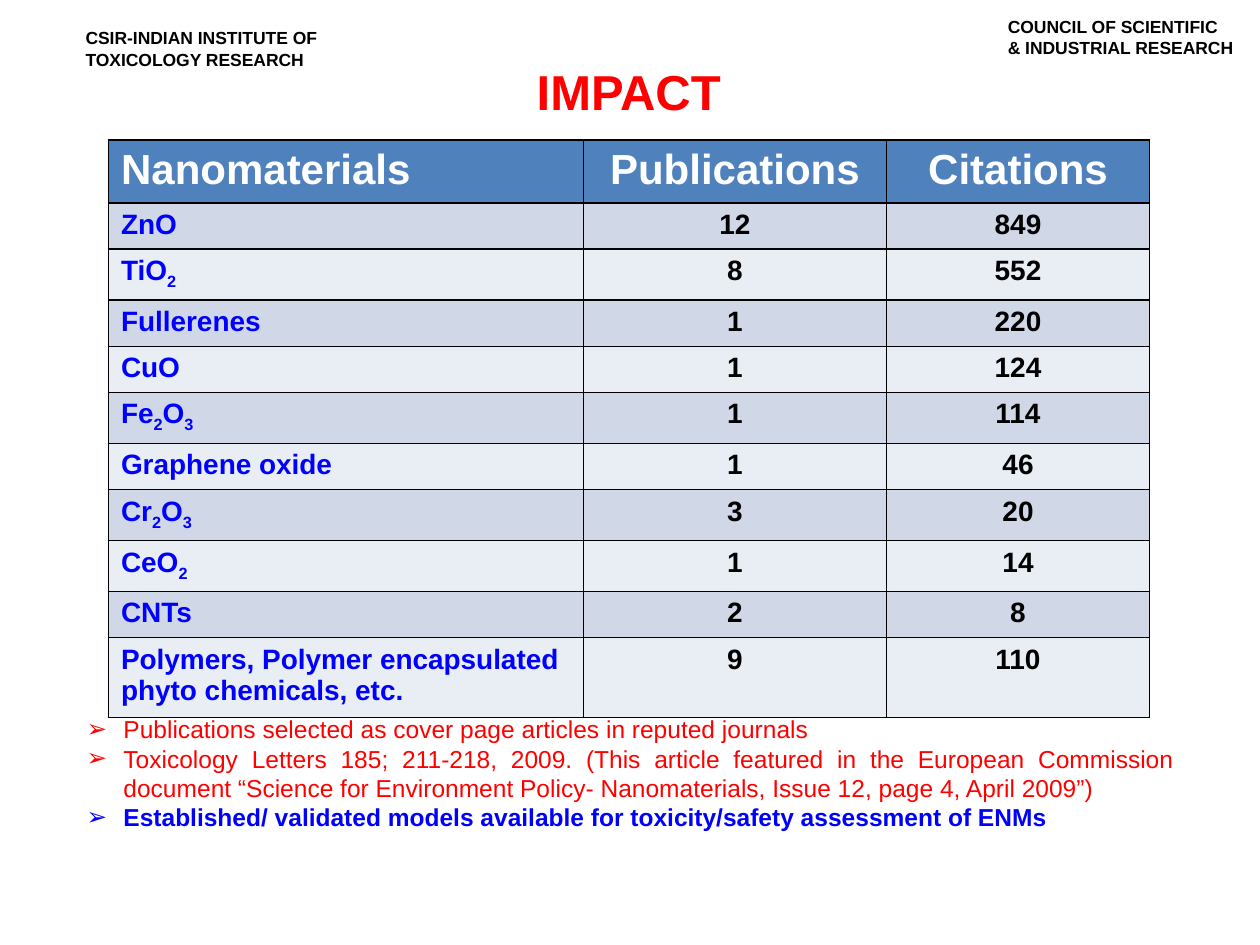
from dataclasses import dataclass
from itertools import groupby

from lxml.etree import SubElement
from pptx import Presentation
from pptx.dml.color import RGBColor
from pptx.enum.text import PP_ALIGN
from pptx.oxml.ns import qn
from pptx.util import Pt


@dataclass(frozen=True)
class Theme:
    font: str = "Arial"
    black: str = "000000"
    white: str = "FFFFFF"
    red: str = "FF0000"
    blue: str = "0000FF"
    header_fill: str = "4F81BD"
    band_fills: tuple = ("D0D8E8", "E9EDF4")
    letterhead_size: int = 10
    title_size: int = 28
    table_header_size: int = 24
    table_body_size: int = 16
    bullet_size: int = 14


THEME = Theme()

COLUMN_WIDTHS = (271.5, 173, 150.5)
HEADINGS = ("Nanomaterials", "Publications", "Citations")
MATERIALS = (
    ("ZnO", 12, 849),
    ("TiO2", 8, 552),
    ("Fullerenes", 1, 220),
    ("CuO", 1, 124),
    ("Fe2O3", 1, 114),
    ("Graphene oxide", 1, 46),
    ("Cr2O3", 3, 20),
    ("CeO2", 1, 14),
    ("CNTs", 2, 8),
    ("Polymers, Polymer encapsulated phyto chemicals, etc.", 9, 110),
)
HEADER_HEIGHT, PLAIN_HEIGHT, FORMULA_HEIGHT, TWO_LINE_HEIGHT = 36, 26.3, 29.1, 45.7

HIGHLIGHTS = (
    ("Publications selected as cover page articles in reputed journals", THEME.red, False),
    ("Toxicology Letters 185; 211-218, 2009. (This article featured in the European "
     "Commission document “Science for Environment Policy- Nanomaterials, Issue 12, "
     "page 4, April 2009”)", THEME.red, False),
    ("Established/ validated models available for toxicity/safety assessment of ENMs",
     THEME.blue, True),
)


def style_paragraph(paragraph, size, color, bold=True, align=PP_ALIGN.LEFT):
    paragraph.alignment = align
    paragraph.font.name = THEME.font
    paragraph.font.size = Pt(size)
    paragraph.font.bold = bold
    paragraph.font.color.rgb = RGBColor.from_string(color)


def add_text_frame(slide, box, wrap=True):
    text_frame = slide.shapes.add_textbox(*map(Pt, box)).text_frame
    text_frame.word_wrap = wrap
    return text_frame


def add_letterhead(slide, box, lines):
    text_frame = add_text_frame(slide, box, wrap=False)
    text_frame.text = "\n".join(lines)
    for paragraph in text_frame.paragraphs:
        style_paragraph(paragraph, THEME.letterhead_size, THEME.black)


def add_title(slide, box, title):
    paragraph = add_text_frame(slide, box).paragraphs[0]
    paragraph.text = title
    style_paragraph(paragraph, THEME.title_size, THEME.red, align=PP_ALIGN.CENTER)


def add_formula(paragraph, formula):
    """Write a material name with its digits as subscripts."""
    for is_digit, letters in groupby(formula, str.isdigit):
        run = paragraph.add_run()
        run.text = "".join(letters)
        if is_digit:
            run._r.get_or_add_rPr().set("baseline", "-25000")


def format_cell(cell, fill):
    properties = cell._tc.get_or_add_tcPr()
    for side in ("lnL", "lnR", "lnT", "lnB"):
        line = SubElement(properties, qn(f"a:{side}"), w=str(Pt(1)))
        solid_fill = SubElement(line, qn("a:solidFill"))
        SubElement(solid_fill, qn("a:srgbClr"), val=THEME.black)
    cell.fill.solid()
    cell.fill.fore_color.rgb = RGBColor.from_string(fill)


def row_height(name):
    if any(map(str.isdigit, name)):
        return FORMULA_HEIGHT
    return TWO_LINE_HEIGHT if len(name) > 30 else PLAIN_HEIGHT


def add_impact_table(slide, left, top):
    heights = [HEADER_HEIGHT] + [row_height(name) for name, *_ in MATERIALS]
    table = slide.shapes.add_table(
        len(heights), len(COLUMN_WIDTHS), Pt(left), Pt(top),
        Pt(sum(COLUMN_WIDTHS)), Pt(sum(heights))).table
    for column, width in zip(table.columns, COLUMN_WIDTHS):
        column.width = Pt(width)
    for row, height in zip(table.rows, heights):
        row.height = Pt(height)

    # Heading row, then alternating bands
    for row_index, values in enumerate((HEADINGS,) + MATERIALS):
        is_header = row_index == 0
        fill = THEME.header_fill if is_header else THEME.band_fills[(row_index - 1) % 2]
        size = THEME.table_header_size if is_header else THEME.table_body_size
        for column_index, value in enumerate(values):
            is_name = column_index == 0
            cell = table.cell(row_index, column_index)
            format_cell(cell, fill)
            paragraph = cell.text_frame.paragraphs[0]
            if is_name:
                add_formula(paragraph, value)
            else:
                paragraph.text = str(value)
            body_color = THEME.blue if is_name else THEME.black
            style_paragraph(paragraph, size, THEME.white if is_header else body_color,
                            align=PP_ALIGN.LEFT if is_name else PP_ALIGN.CENTER)


def add_bullet(paragraph, indent):
    properties = paragraph._p.get_or_add_pPr()
    properties.set("marL", str(Pt(indent)))
    properties.set("indent", str(-Pt(indent)))
    SubElement(properties, qn("a:buFont"), typeface=THEME.font)
    SubElement(properties, qn("a:buChar"), char="➢")


def add_highlights(slide, box):
    text_frame = add_text_frame(slide, box)
    text_frame.text = "\n".join(text for text, *_ in HIGHLIGHTS)
    for paragraph, (_, color, bold) in zip(text_frame.paragraphs, HIGHLIGHTS):
        add_bullet(paragraph, 21)
        style_paragraph(paragraph, THEME.bullet_size, color, bold, PP_ALIGN.JUSTIFY)


def main():
    presentation = Presentation()
    presentation.slide_width, presentation.slide_height = Pt(720), Pt(540)
    slide = presentation.slides.add_slide(presentation.slide_layouts[6])

    # Letterhead on both sides
    add_letterhead(slide, (41.8, 12.2, 148.3, 31.7),
                   ("CSIR-INDIAN INSTITUTE OF", "TOXICOLOGY RESEARCH"))
    add_letterhead(slide, (568.8, 5.8, 145.4, 31.7),
                   ("COUNCIL OF SCIENTIFIC", "& INDUSTRIAL RESEARCH"))

    # Title, table and closing points
    add_title(slide, (164.9, 31.7, 388.8, 41), "IMPACT")
    add_impact_table(slide, 62, 79.9)
    add_highlights(slide, (42.5, 404.6, 635.8, 74.9))
    presentation.save("out.pptx")


if __name__ == "__main__":
    main()
